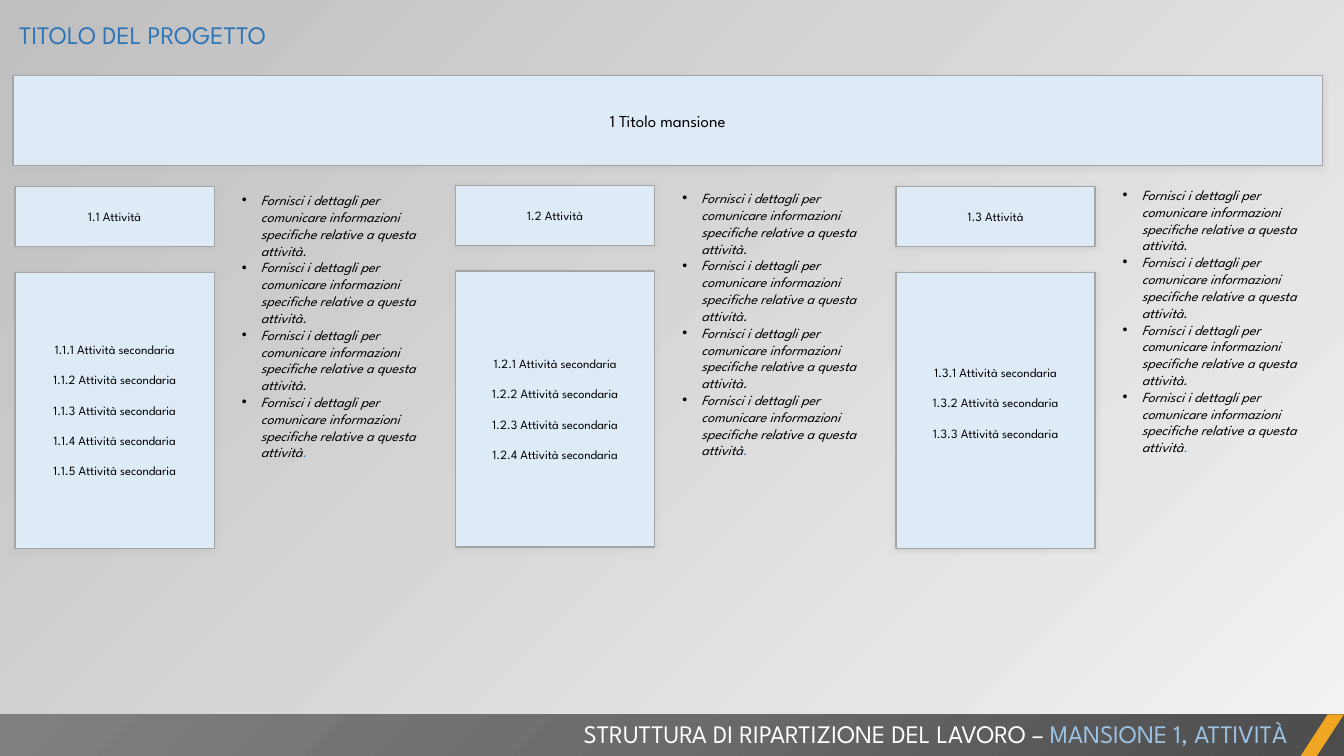
from dataclasses import dataclass

from lxml import etree
from pptx import Presentation
from pptx import util as u
from pptx.dml.color import RGBColor
from pptx.enum import shapes, text
from pptx.oxml import parse_xml
from pptx.oxml.ns import nsdecls, qn


@dataclass(frozen=True)
class Theme:
    font: str = "League Spartan"
    ink: str = "000000"
    white: str = "FFFFFF"
    blue: str = "2E75B6"
    pale_blue: str = "9DC3E6"
    panel: str = "DEEBF7"
    edge: str = "A5A5A5"
    shadow: str = "BFBFBF"
    orange: str = "F0A622"
    page_light: str = "F2F2F2"
    page_dark: str = "BFBFBF"
    band: tuple = ((0, "4C4C4C"), (50, "6B6B6B"), (100, "808080"))
    heading: float = 18
    job: float = 12
    detail: float = 10
    task: float = 9


THEME = Theme()
DETAIL = "Fornisci i dettagli per comunicare informazioni specifiche relative a questa attività"
DETAIL_COUNT = 4
# Per activity: top of boxes, top of details, number of subtasks, extra space below them
ACTIVITIES = [(4.7, 4.7, 5, 0), (4.67, 4.65, 4, 0), (4.7, 4.57, 3, 0.38)]
COLUMN_LEFT, COLUMN_PITCH = 0.38, 11.1


def place(shape, box):
    for name, value in zip(("left", "top", "width", "height"), box):
        setattr(shape, name, u.Cm(value))


def set_frame(shape, anchor):
    frame = shape.text_frame
    values = {"word_wrap": True, "auto_size": text.MSO_AUTO_SIZE.NONE,
              "vertical_anchor": anchor}
    for name, value in values.items():
        setattr(frame, name, value)
    return frame


def write(frame, lines, size, align, italic=False, gap=0):
    """Each line is a list of (wording, colour) spans."""
    for index, line in enumerate(lines):
        para = frame.paragraphs[0] if index == 0 else frame.add_paragraph()
        layout = {"alignment": align, "line_spacing": 1.0, "space_after": u.Pt(0),
                  "space_before": u.Pt(gap if index else 0)}
        for name, value in layout.items():
            setattr(para, name, value)
        for wording, colour in line:
            span = para.add_run()
            span.text = wording
            values = {"name": THEME.font, "size": u.Pt(size), "bold": False, "italic": italic}
            for name, value in values.items():
                setattr(span.font, name, value)
            span.font.color.rgb = RGBColor.from_string(colour)


def add_plain(page, kind, box, colour):
    shape = page.shapes.add_shape(kind, *map(u.Cm, box))
    shape.shadow.inherit = False
    shape.fill.solid()
    shape.fill.fore_color.rgb = RGBColor.from_string(colour)
    shape.line.fill.background()
    return shape


def add_panel(page, box, lines, size, gap=0, space_below=0):
    panel = add_plain(page, shapes.MSO_SHAPE.RECTANGLE, box, THEME.panel)
    panel.line.color.rgb = RGBColor.from_string(THEME.edge)
    panel.line.width = u.Pt(1)
    effects = panel._element.spPr.find(qn("a:effectLst"))
    effects.append(parse_xml(
        f'<a:outerShdw {nsdecls("a")} blurRad="{u.Pt(4)}" dist="{u.Pt(1)}" dir="5400000" '
        f'algn="t" rotWithShape="0"><a:srgbClr val="{THEME.shadow}">'
        f'<a:alpha val="40000"/></a:srgbClr></a:outerShdw>'))
    frame = set_frame(panel, text.MSO_ANCHOR.MIDDLE)
    frame.margin_bottom = u.Cm(0.13 + space_below)
    write(frame, [[(line, THEME.ink)] for line in lines], size, text.PP_ALIGN.CENTER, gap=gap)


def paint_background(page):
    fill = page.background.fill
    fill.gradient()
    fill.gradient_angle = 135
    for stop, colour in zip(fill.gradient_stops, (THEME.page_light, THEME.page_dark)):
        stop.color.rgb = RGBColor.from_string(colour)


def build_title(page, box):
    title = page.shapes.title
    place(title, box)
    frame = set_frame(title, text.MSO_ANCHOR.TOP)
    write(frame, [[("TITOLO DEL PROGETTO", THEME.blue)]], THEME.heading, text.PP_ALIGN.LEFT)


def build_details(holder, box):
    place(holder, box)
    frame = set_frame(holder, text.MSO_ANCHOR.TOP)
    lines = [[(DETAIL + ".", THEME.ink)]] * (DETAIL_COUNT - 1)
    lines.append([(DETAIL, THEME.ink), (".", THEME.blue)])
    write(frame, lines, THEME.detail, text.PP_ALIGN.LEFT, italic=True)
    for para in frame.paragraphs:
        props = para._p.get_or_add_pPr()
        props.set("marL", str(u.Cm(0.48)))
        props.set("indent", str(-u.Cm(0.48)))
        etree.SubElement(props, qn("a:buFont")).set("typeface", "Arial")
        etree.SubElement(props, qn("a:buChar")).set("char", "•")


def build_activity(page, holder, number, left, activity):
    top, details_top, count, space_below = activity
    add_panel(page, (left, top, 5.02, 1.52), [f"1.{number} Attività"], THEME.task)
    subtasks = [f"1.{number}.{item} Attività secondaria" for item in range(1, count + 1)]
    add_panel(page, (left, top + 2.16, 5.02, 6.96), subtasks, THEME.task,
              gap=10.8, space_below=space_below)
    build_details(holder, (left + 5.46, details_top, 5.23, 7.62))


def build_footer(page, box):
    left, top, width, height = box
    # Band with a radial gradient
    band = add_plain(page, shapes.MSO_SHAPE.RECTANGLE, box, THEME.band[0][1])
    stops = "".join(f'<a:gs pos="{pos * 1000}"><a:srgbClr val="{colour}"/></a:gs>'
                    for pos, colour in THEME.band)
    props = band._element.spPr
    props.replace(props.find(qn("a:solidFill")), parse_xml(
        f'<a:gradFill {nsdecls("a")} rotWithShape="1"><a:gsLst>{stops}</a:gsLst>'
        f'<a:path path="circle"><a:fillToRect l="100000" t="100000"/></a:path></a:gradFill>'))
    # Slanted corner
    corner = add_plain(page, shapes.MSO_SHAPE.PARALLELOGRAM,
                       (left + width - 1.09, top, 1.09, height), THEME.orange)
    corner.adjustments[0] = 0.65
    # Heading
    heading = page.shapes.add_textbox(*map(u.Cm, (left + 2.46, top - 0.02, 30.23, 1.02)))
    write(set_frame(heading, text.MSO_ANCHOR.TOP),
          [[("STRUTTURA DI RIPARTIZIONE DEL LAVORO – ", THEME.white),
            ("MANSIONE 1, ATTIVITÀ", THEME.pale_blue)]],
          THEME.heading, text.PP_ALIGN.RIGHT)


def build_breakdown(deck):
    page = deck.slides.add_slide(deck.slide_layouts.get_by_name("Comparison"))
    holders = [item for item in page.placeholders if item.placeholder_format.idx > 0]
    spare = holders.pop()
    spare._element.getparent().remove(spare._element)

    paint_background(page)
    build_title(page, (0.23, 0.36, 25.68, 1.02))
    add_panel(page, (0.33, 1.9, 33, 2.28), ["1 Titolo mansione"], THEME.job)
    for index, (holder, activity) in enumerate(zip(holders, ACTIVITIES)):
        left = COLUMN_LEFT + index * COLUMN_PITCH
        build_activity(page, holder, index + 1, left, activity)
    build_footer(page, (0, 18, 33.87, 1.05))


def main():
    deck = Presentation()
    deck.slide_width, deck.slide_height = u.Cm(33.87), u.Cm(19.05)
    build_breakdown(deck)
    deck.save("out.pptx")


if __name__ == "__main__":
    main()
